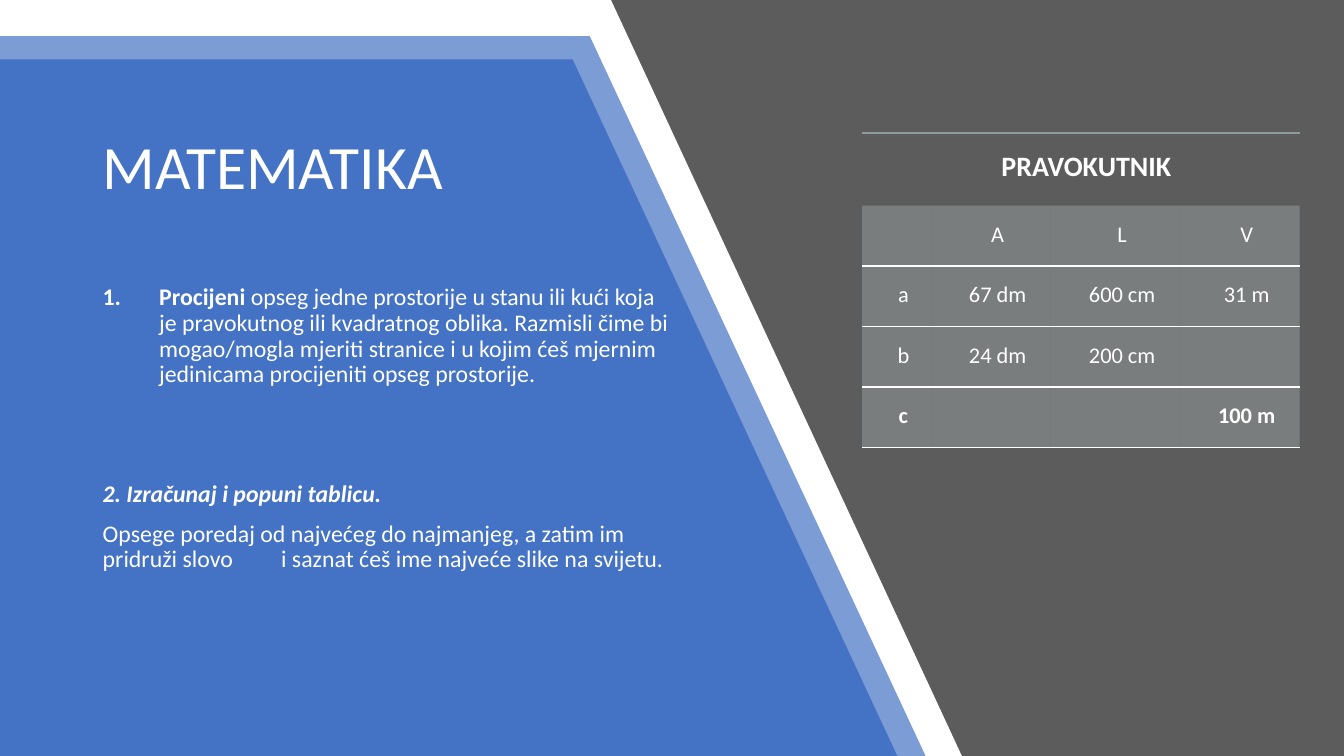
from lxml.etree import SubElement
from pptx import Presentation
from pptx.dml.color import RGBColor
from pptx.enum.shapes import MSO_SHAPE as Shape
from pptx.enum.text import MSO_ANCHOR as Anchor, PP_ALIGN as Align
from pptx.oxml import parse_xml
from pptx.oxml.ns import nsdecls, qn
from pptx.util import Pt

# Content
TITLE = "MATEMATIKA"
# Each paragraph: runs of (text, bold, italic), and its space before in points
BODY = [
    ([("Procijeni", True, False),
      (" opseg jedne prostorije u stanu ili kući koja je pravokutnog ili kvadratnog "
       "oblika. Razmisli čime bi mogao/mogla mjeriti stranice i u kojim ćeš mjernim "
       "jedinicama procijeniti opseg prostorije.", False, False)], 10),
    ([("2. Izračunaj i popuni tablicu.", True, True)], 67),
    ([("Opsege poredaj od najvećeg do najmanjeg, a zatim im pridruži slovo\t"
       "i saznat ćeš ime najveće slike na svijetu.", False, False)], 10),
]
TABLE = [
    ["PRAVOKUTNIK", "", "", ""],
    ["", "A", "L", "V"],
    ["a", "67 dm", "600 cm", "31 m"],
    ["b", "24 dm", "200 cm", ""],
    ["c", "", "", "100 m"],
]
BOLD_ROWS = (0, len(TABLE) - 1)

# Look and measures: 100 px to the inch
PX = 9144
FONT = "Calibri"
COLORS = {"black": "000000", "white": "FFFFFF", "dark": "404040", "blue": "4472C4",
          "cell": "B4BCBE", "rule": "8F9A9D"}
WIDTH, HEIGHT = 1333, 750
# Slanted panels: top, top right corner, bottom right corner, colour, opacity
PANELS = [(0, 606, 954, "white", 100), (36, 585, 918, "blue", 70), (59, 568, 890, "blue", 100)]
TITLE_BOX = (92, 100, 501, 137)
BODY_BOX = (92, 278, 585, 387)
NUMBER_INDENT = 56
TAB_STOP = 177
TABLE_LEFT, TABLE_TOP = 855, 132
COLUMN_WIDTHS = (69, 118, 129, 118)
ROW_HEIGHTS = (72, 60, 60, 60, 60)
CELL_LEFT_MARGIN, HEADING_MARGIN, CELL_MARGIN = 28, 17, 15
PLAIN_TABLE_STYLE = "{2D5ABB26-0587-4C30-8999-92F81FD0307C}"


def px(*lengths):
    return [length * PX for length in lengths]


def paint(fill, color, opacity=100):
    fill.solid()
    fill.fore_color.rgb = RGBColor.from_string(COLORS[color])
    if opacity < 100:
        color_node = fill._xPr.find(qn("a:solidFill"))[0]
        SubElement(color_node, qn("a:alpha")).set("val", str(opacity * 1000))


def finish(shape, color, opacity=100):
    paint(shape.fill, color, opacity)
    shape.line.fill.background()
    shape.shadow.inherit = False


def style(run, size, bold=False, italic=False):
    font = run.font
    font.name, font.size, font.bold, font.italic = FONT, Pt(size), bold, italic
    font.color.rgb = RGBColor.from_string(COLORS["white"])


def add_text_frame(slide, box, anchor):
    frame = slide.shapes.add_textbox(*px(*box)).text_frame
    frame.word_wrap = True
    frame.vertical_anchor = anchor
    return frame


def add_border(cell, side, color, opacity=100):
    cell._tc.get_or_add_tcPr().insert(0, parse_xml(
        f'<a:{side} {nsdecls("a")} w="{Pt(1.5)}"><a:solidFill><a:srgbClr val="{COLORS[color]}">'
        f'<a:alpha val="{opacity * 1000}"/></a:srgbClr></a:solidFill></a:{side}>'))


def add_background(slide):
    paint(slide.background.fill, "black")
    for color, opacity in (("white", 100), ("dark", 85)):
        finish(slide.shapes.add_shape(Shape.RECTANGLE, *px(0, 0, WIDTH, HEIGHT)), color, opacity)
    for top, top_right, bottom_right, color, opacity in PANELS:
        builder = slide.shapes.build_freeform(0, top, scale=PX)
        builder.add_line_segments([(top_right, top), (bottom_right, HEIGHT), (0, HEIGHT)])
        finish(builder.convert_to_shape(), color, opacity)


def add_texts(slide):
    title = add_text_frame(slide, TITLE_BOX, Anchor.MIDDLE).paragraphs[0]
    title.text = TITLE
    title.line_spacing = 0.9
    style(title.runs[0], 44)

    frame = add_text_frame(slide, BODY_BOX, Anchor.TOP)
    for index, (runs, space) in enumerate(BODY):
        paragraph = frame.add_paragraph() if index else frame.paragraphs[0]
        paragraph.line_spacing = 0.9
        paragraph.space_before = Pt(space)
        for text, bold, italic in runs:
            run = paragraph.add_run()
            run.text = text
            style(run, 17, bold, italic)

    # Numbering of the first task, and the tab gap in the last paragraph
    numbered = frame.paragraphs[0]._p.get_or_add_pPr()
    numbered.set("marL", str(NUMBER_INDENT * PX))
    numbered.set("indent", str(-NUMBER_INDENT * PX))
    SubElement(numbered, qn("a:buFont")).set("typeface", "+mj-lt")
    SubElement(numbered, qn("a:buAutoNum")).set("type", "arabicPeriod")
    tabs = SubElement(frame.paragraphs[-1]._p.get_or_add_pPr(), qn("a:tabLst"))
    tab = SubElement(tabs, qn("a:tab"))
    tab.set("pos", str(TAB_STOP * PX))
    tab.set("algn", "l")


def add_rectangle_table(slide):
    box = px(TABLE_LEFT, TABLE_TOP, sum(COLUMN_WIDTHS), sum(ROW_HEIGHTS))
    table = slide.shapes.add_table(len(TABLE), len(COLUMN_WIDTHS), *box).table
    table.first_row = table.horz_banding = False
    table._tbl.tblPr.find(qn("a:tableStyleId")).text = PLAIN_TABLE_STYLE
    for column, width in zip(table.columns, COLUMN_WIDTHS):
        column.width = width * PX
    for row, height in zip(table.rows, ROW_HEIGHTS):
        row.height = height * PX
    table.cell(0, 0).merge(table.cell(0, len(COLUMN_WIDTHS) - 1))

    for row_index, texts in enumerate(TABLE):
        heading = row_index == 0
        for column_index, text in enumerate(texts):
            cell = table.cell(row_index, column_index)
            if heading:
                cell.fill.background()
                add_border(cell, "lnT", "rule", 60)
            else:
                paint(cell.fill, "cell", 35)
                add_border(cell, "lnB", "white")
            if not text:
                continue
            margin = (HEADING_MARGIN if heading else CELL_MARGIN) * PX
            cell.margin_left = CELL_LEFT_MARGIN * PX
            cell.margin_top = cell.margin_right = cell.margin_bottom = margin
            paragraph = cell.text_frame.paragraphs[0]
            paragraph.text = text
            paragraph.alignment = Align.CENTER
            style(paragraph.runs[0], 20 if heading else 16, row_index in BOLD_ROWS)


def main():
    presentation = Presentation()
    presentation.slide_width, presentation.slide_height = px(WIDTH, HEIGHT)
    slide = presentation.slides.add_slide(presentation.slide_layouts[6])
    add_background(slide)
    add_texts(slide)
    add_rectangle_table(slide)
    presentation.save("out.pptx")


if __name__ == "__main__":
    main()
